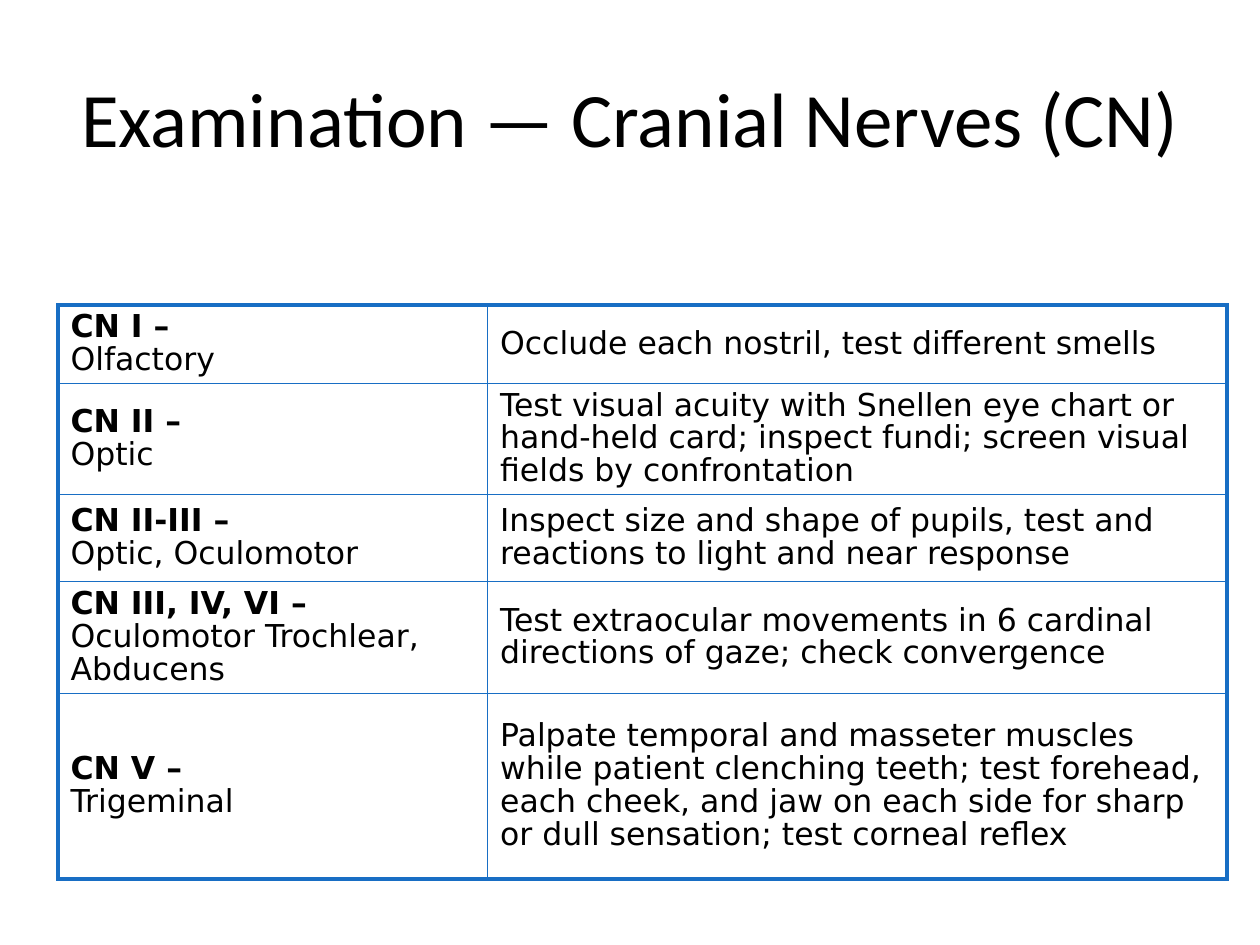
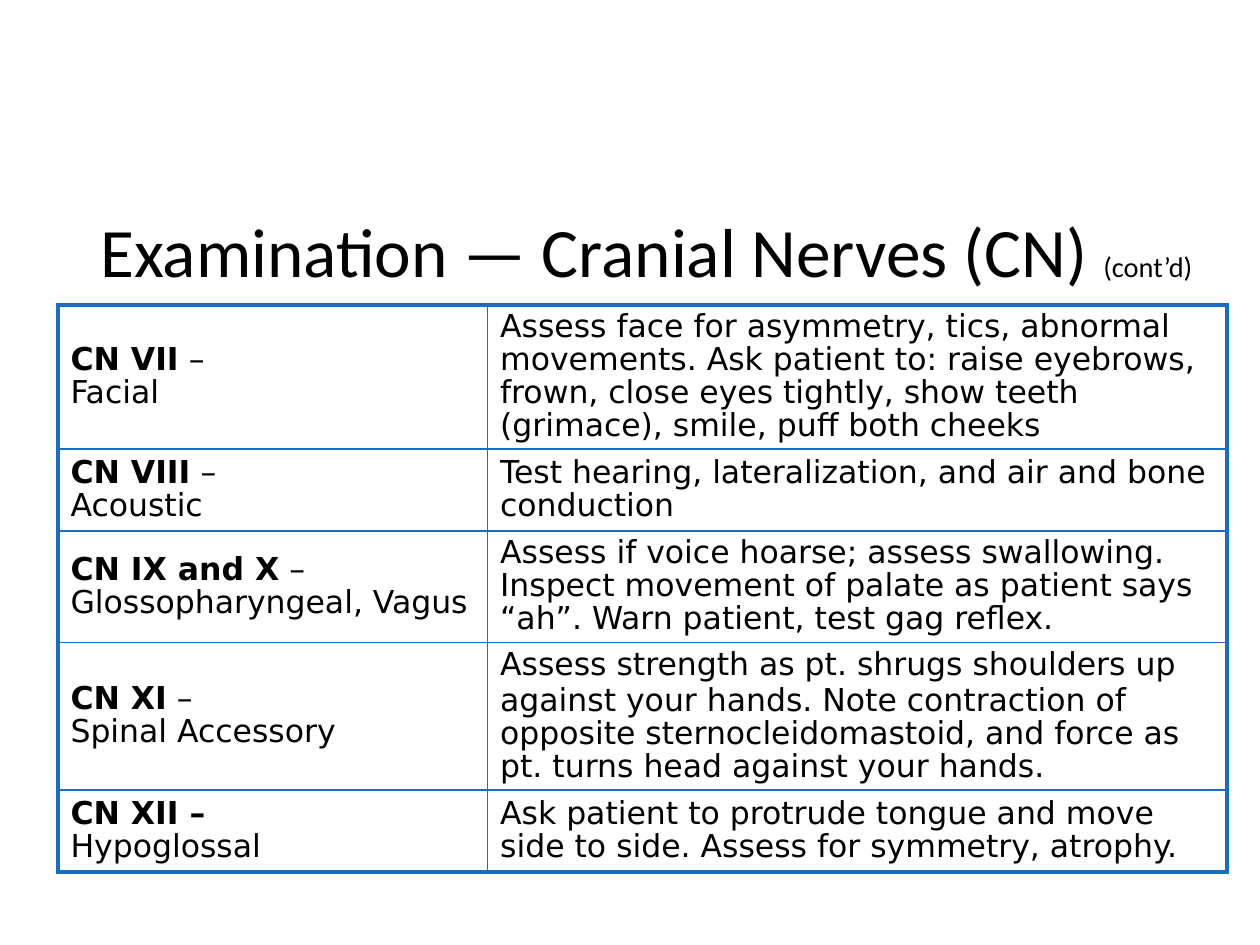
from dataclasses import dataclass

from lxml.etree import SubElement
from pptx import Presentation
from pptx.dml.color import RGBColor
from pptx.enum.text import MSO_ANCHOR, MSO_AUTO_SIZE, PP_ALIGN
from pptx.oxml.ns import qn
from pptx.util import Inches, Pt


@dataclass(frozen=True)
class Theme:
    """Colours, fonts and sizes shared by the slides."""

    ink: str = "000000"
    rule: str = "186EC4"
    title_font: str = "Calibri"
    table_font: str = "DejaVu Sans"
    title_size: float = 44
    continued_title_size: float = 39.6
    suffix_size: float = 16.2
    table_size: float = 18
    outer_line: float = 2.25
    inner_line: float = 1
    columns: tuple = (3.41, 5.87)
    table_left: float = 0.46
    table_top: float = 2.42


THEME = Theme()

FIRST_NERVES = [
    (0.62, "CN I – \n", "Olfactory", ["Occlude each nostril, test different smells"]),
    (0.88, "CN II – \n", "Optic",
     ["Test visual acuity with Snellen eye chart or hand-held card; inspect fundi; "
      "screen visual fields by confrontation"]),
    (0.69, "CN II-III – \n", "Optic, Oculomotor",
     ["Inspect size and shape of pupils, test and reactions to light and near response"]),
    (0.89, "CN III, IV, VI –", " Oculomotor Trochlear, Abducens",
     ["Test extraocular movements in 6 cardinal directions of gaze; check convergence"]),
    (1.47, "CN V – \n", "Trigeminal",
     ["Palpate temporal and masseter muscles while patient clenching teeth; test forehead, "
      "each cheek, and jaw on each side for sharp or dull sensation; test corneal reflex"]),
]

LATER_NERVES = [
    (1.14, "CN VII", " – \nFacial",
     ["Assess face for asymmetry, tics, abnormal movements. Ask patient to: raise eyebrows, "
      "frown, close eyes tightly, show teeth (grimace), smile, puff both cheeks"]),
    (0.65, "CN VIII", " – \nAcoustic",
     ["Test hearing, lateralization, and air and bone conduction"]),
    (0.88, "CN IX and X", " – Glossopharyngeal, Vagus",
     ["Assess if voice hoarse; assess swallowing. Inspect movement of palate as patient "
      "says “ah”. Warn patient, test gag reflex."]),
    (1.17, "CN XI", " – \nSpinal Accessory",
     ["Assess strength as pt. shrugs shoulders up",
      "against your hands. Note contraction of opposite sternocleidomastoid, "
      "and force as pt. turns head against your hands."]),
    (0.65, "CN XII – \n", "Hypoglossal",
     ["Ask patient to protrude tongue and move side to side. "
      "Assess for symmetry, atrophy."]),
]


def add_text(para, text, *, size=THEME.table_size, font=THEME.table_font, bold=False):
    """Append formatted text to a paragraph, turning newlines into line breaks."""
    for index, line in enumerate(text.split("\n")):
        if index:
            para.add_line_break()
        if line:
            span = para.add_run()
            span.text = line
            span.font.size = Pt(size)
            span.font.name = font
            span.font.bold = bold
            span.font.color.rgb = RGBColor.from_string(THEME.ink)


def add_title(page, box, spans):
    """Place the title placeholder in the box and fill it with (text, size) spans."""
    title = page.shapes.title
    title.left, title.top, title.width, title.height = map(Inches, box)
    frame = title.text_frame
    frame.auto_size = MSO_AUTO_SIZE.NONE
    frame.vertical_anchor = MSO_ANCHOR.MIDDLE
    para = frame.paragraphs[0]
    para.alignment = PP_ALIGN.CENTER
    for text, size in spans:
        add_text(para, text, size=size, font=THEME.title_font)


def set_borders(cell, outer_edges):
    """Draw the four borders of a cell, thicker on the outer edges."""
    properties = cell._tc.get_or_add_tcPr()
    for position, edge in enumerate("LRTB"):
        width = THEME.outer_line if edge in outer_edges else THEME.inner_line
        line = SubElement(properties, qn(f"a:ln{edge}"), w=str(Pt(width)))
        fill = SubElement(line, qn("a:solidFill"))
        SubElement(fill, qn("a:srgbClr"), val=THEME.rule)
        properties.insert(position, line)


def format_paragraph(para, space_before):
    """Set the tight line spacing used in the table."""
    para.line_spacing = 0.9
    para.space_before = Pt(space_before)


def fill_cell(cell, paragraphs, space_before, outer_edges):
    """Write paragraphs of (text, bold) spans into a bordered cell."""
    cell.fill.background()
    cell.vertical_anchor = MSO_ANCHOR.MIDDLE
    set_borders(cell, outer_edges)
    for index, spans in enumerate(paragraphs):
        frame = cell.text_frame
        para = frame.add_paragraph() if index else frame.paragraphs[0]
        format_paragraph(para, space_before)
        for text, bold in spans:
            add_text(para, text, bold=bold)


def add_nerve_table(page, left, top, nerves, test_space):
    """Add the table of nerves and their tests at the given corner."""
    height = sum(nerve[0] for nerve in nerves)
    table = page.shapes.add_table(
        len(nerves), len(THEME.columns), Inches(left), Inches(top),
        Inches(sum(THEME.columns)), Inches(height)).table
    table.first_row = table.horz_banding = False
    for column, width in zip(table.columns, THEME.columns):
        column.width = Inches(width)
    for index, (row_height, number, name, tests) in enumerate(nerves):
        table.rows[index].height = Inches(row_height)
        edges = "T" * (index == 0) + "B" * (index == len(nerves) - 1)
        fill_cell(table.cell(index, 0), [[(number, True), (name, False)]], 1, edges + "L")
        fill_cell(table.cell(index, 1), [[(test, False)] for test in tests],
                  test_space, edges + "R")


def add_nerve_slide(deck, title_box, title_spans, nerves, test_space):
    """Add one slide with a title and a nerve table."""
    page = deck.slides.add_slide(deck.slide_layouts[5])
    add_title(page, title_box, title_spans)
    add_nerve_table(page, THEME.table_left, THEME.table_top, nerves, test_space)


def main():
    """Build and save the deck."""
    deck = Presentation()
    deck.slide_width, deck.slide_height = Inches(10), Inches(7.5)
    heading = "Examination — Cranial Nerves (CN)"
    add_nerve_slide(deck, (0.5, 0.3, 9, 1.25), [(heading, THEME.title_size)],
                    FIRST_NERVES, 1)
    add_nerve_slide(deck, (0.47, 1.77, 9.32, 0.42),
                    [(heading + " ", THEME.continued_title_size),
                     ("(cont’d)", THEME.suffix_size)],
                    LATER_NERVES, 2)
    deck.save("out.pptx")


if __name__ == "__main__":
    main()
